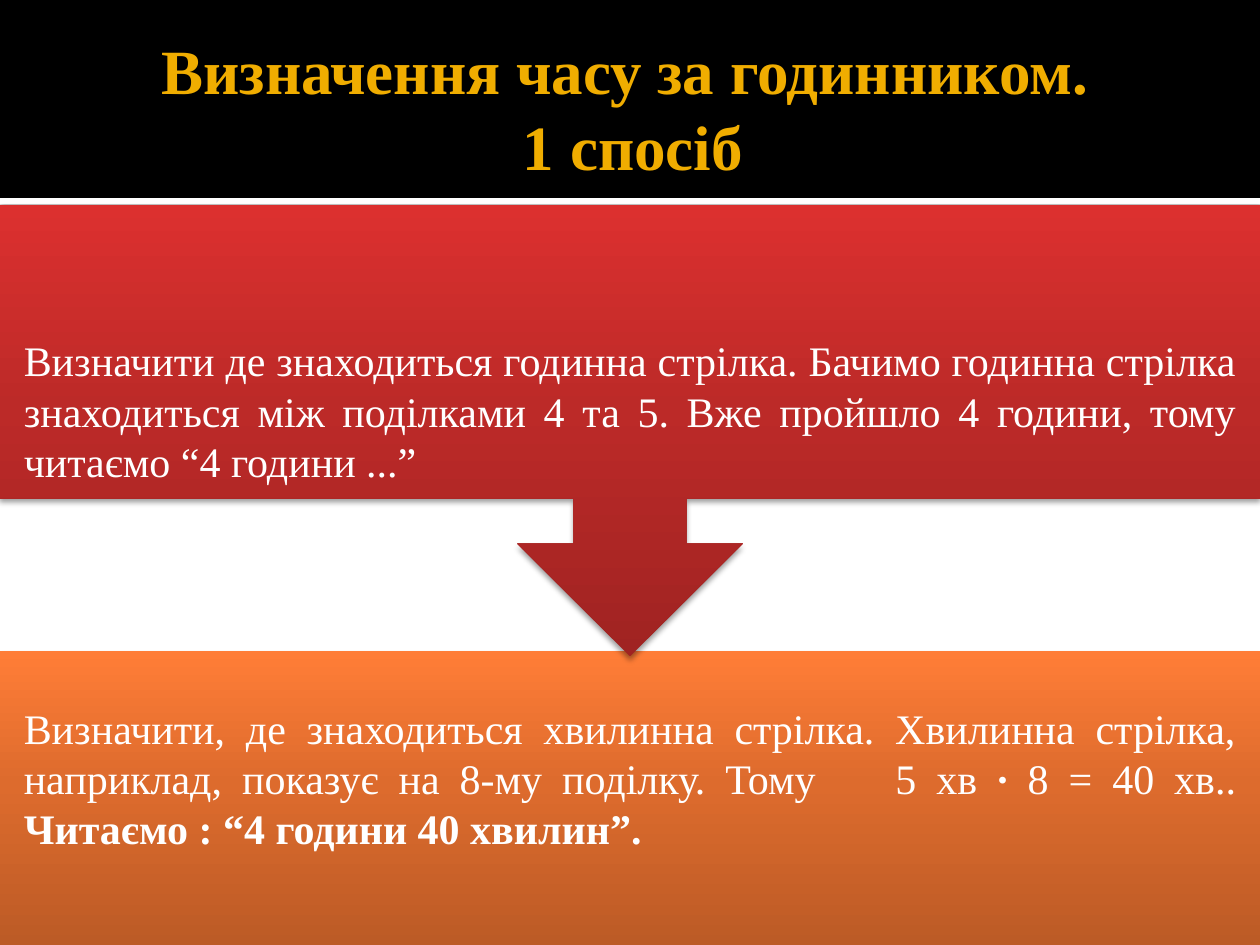
import pptx
import pptx.dml.color
import pptx.enum.shapes
import pptx.enum.text
import pptx.oxml
import pptx.util
from pptx.util import Cm

RGBColor = pptx.dml.color.RGBColor
SHAPE = pptx.enum.shapes.MSO_SHAPE
ALIGN = pptx.enum.text.PP_ALIGN
WHITE = RGBColor(0xFF, 0xFF, 0xFF)
BLACK = RGBColor(0x00, 0x00, 0x00)
GOLD = RGBColor(0xF0, 0xAD, 0x00)
REDS = [RGBColor(0xA0, 0x23, 0x22), RGBColor(0xBC, 0x2A, 0x28), RGBColor(0xDC, 0x30, 0x2F)]
ORANGES = [RGBColor(0xBC, 0x5B, 0x26), RGBColor(0xDD, 0x6B, 0x2D), RGBColor(0xFF, 0x7D, 0x37)]
NAMESPACE = 'xmlns:a="http://schemas.openxmlformats.org/drawingml/2006/main"'

deck = pptx.Presentation()
deck.slide_width, deck.slide_height = Cm(25.4), Cm(19.05)
page = deck.slides.add_slide(deck.slide_layouts[6])


def add_panel(kind, top, height, colours, shadow=None):
    """Full-width shape; three colours make a gradient from bottom to top."""
    panel = page.shapes.add_shape(kind, 0, Cm(top), deck.slide_width, Cm(height))
    panel.shadow.inherit = False
    panel.line.fill.background()
    properties = panel.element.spPr
    if len(colours) == 1:
        panel.fill.solid()
        panel.fill.fore_color.rgb = colours[0]
    else:
        stops = "".join(
            f'<a:gs pos="{place}000"><a:srgbClr val="{colour}"/></a:gs>'
            for place, colour in zip((0, 55, 100), colours))
        gradient = pptx.oxml.parse_xml(
            f'<a:gradFill {NAMESPACE} rotWithShape="0"><a:gsLst>{stops}</a:gsLst>'
            '<a:lin ang="16200000" scaled="0"/></a:gradFill>')
        panel.line._get_or_add_ln().addprevious(gradient)
    if shadow:
        opacity, blur, distance = shadow
        properties.find(pptx.oxml.ns.qn("a:effectLst")).append(pptx.oxml.parse_xml(
            f'<a:outerShdw {NAMESPACE} blurRad="{pptx.util.Pt(blur)}" '
            f'dist="{pptx.util.Pt(distance)}" dir="5400000" rotWithShape="0">'
            f'<a:srgbClr val="000000"><a:alpha val="{opacity}000"/></a:srgbClr></a:outerShdw>'))
    return panel


def add_text(left, top, width, height, margins, alignment, spans, font_format):
    """Text box with one paragraph; each span is (text, bold, spacing in points)."""
    box = page.shapes.add_textbox(Cm(left), Cm(top), Cm(width), Cm(height))
    frame = box.text_frame
    frame_format = {"word_wrap": True, "vertical_anchor": pptx.enum.text.MSO_ANCHOR.MIDDLE}
    for side, margin in zip(("left", "top", "right", "bottom"), margins):
        frame_format[f"margin_{side}"] = Cm(margin)
    for name, value in frame_format.items():
        setattr(frame, name, value)
    para = frame.paragraphs[0]
    para.alignment = alignment
    for text, bold, spacing in spans:
        for number, line in enumerate(text.split("\n")):
            if number:
                para.add_line_break()
            span = para.add_run()
            span.text = line
            for name, value in font_format.items():
                setattr(span.font, name, value)
            span.font.bold = bold
            span.font.color.rgb = GOLD if alignment == ALIGN.CENTER else WHITE
            if spacing:
                span.font._element.set("spc", str(spacing * 100))


# Header band and title
add_panel(SHAPE.RECTANGLE, 3.99, 0.13, [WHITE], shadow=(60, 2.5, 0.8))
add_panel(SHAPE.RECTANGLE, 0, 3.99, [BLACK])
title_format = {"name": "Times New Roman", "size": pptx.util.Pt(36)}
add_text(1.27, 0.43, 22.86, 3.48, (0.25, 0.13, 0.13, 0.13), ALIGN.CENTER,
         [("Визначення часу за годинником. \n1 спосіб", True, 0)], title_format)

# Two steps, the upper one pointing at the lower one
step_format = {"name": "Times New Roman", "size": pptx.util.Pt(24)}
step_margins = (0.48, 0.48, 0.48, 1.3)
step_shadow = (38, 3.1, 2)
minute_spans = [
    ("Визначити, де знаходиться хвилинна стрілка. Хвилинна стрілка, "
     "наприклад, показує на 8-му поділку. Тому", False, 0),
    (" ", False, 34),  # wide gap before the sum
    ("5 хв ", False, 0),
    ("∙", True, 0),
    (" 8 = 40 хв.. ", False, 0),
    ("Читаємо : “4 години 40 хвилин”.", True, 0),
]
hour_spans = [
    ("Визначити де знаходиться годинна стрілка. Бачимо годинна стрілка "
     "знаходиться між поділками 4 та 5. Вже пройшло 4 години, тому "
     "читаємо “4 години ...”", False, 0),
]
steps = [
    (SHAPE.RECTANGLE, 13.13, 5.92, 0, ORANGES, minute_spans),
    (SHAPE.UP_ARROW_CALLOUT, 4.14, 9.09, 180, REDS, hour_spans),
]
for kind, top, height, rotation, colours, spans in steps:
    panel = add_panel(kind, top, height, colours, step_shadow)
    panel.rotation = rotation
    add_text(0, top, 25.4, height, step_margins, ALIGN.JUSTIFY, spans, step_format)

deck.save("out.pptx")
